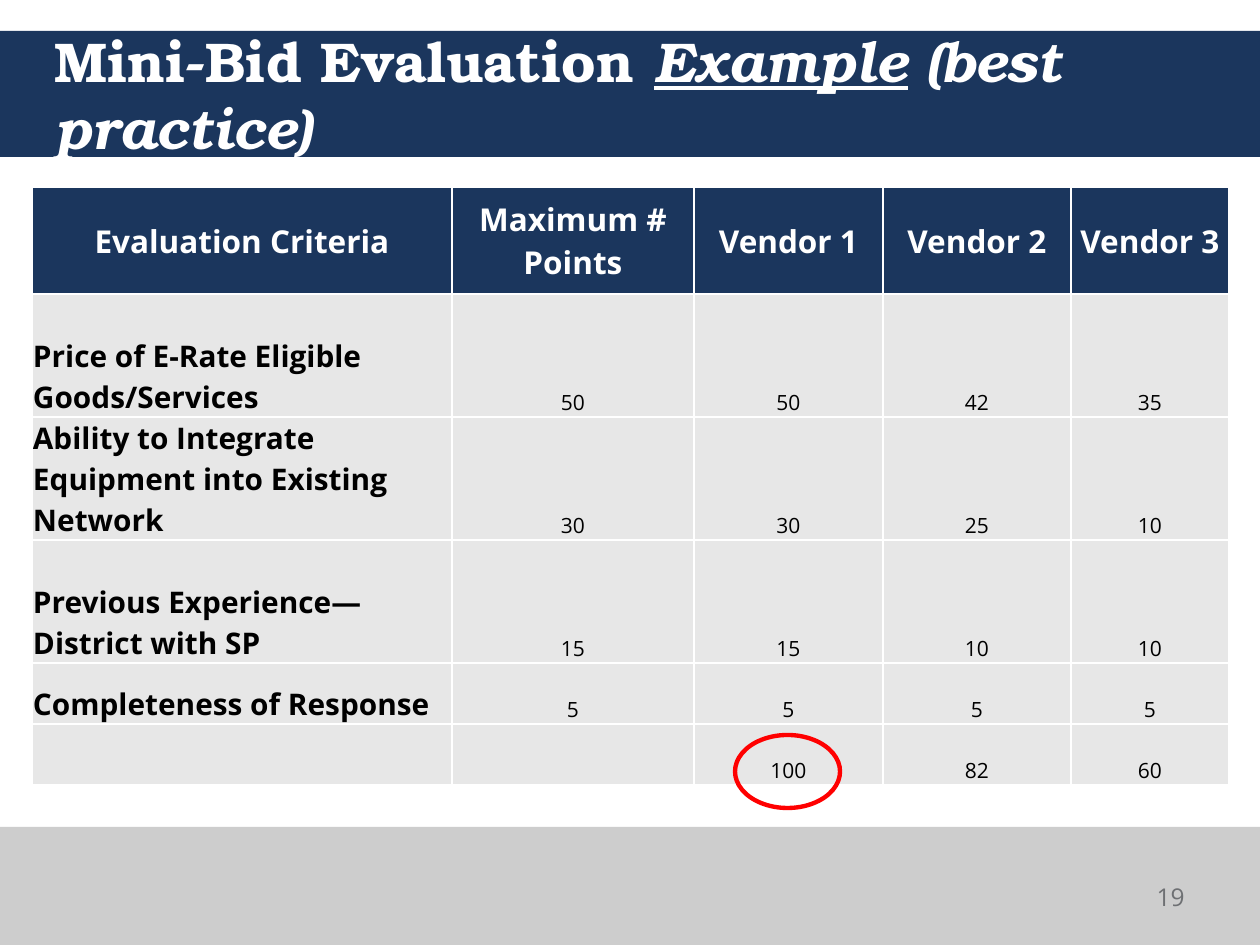
from dataclasses import dataclass

from lxml import etree
from pptx import Presentation
from pptx.dml.color import RGBColor
from pptx.enum.shapes import MSO_SHAPE
from pptx.enum.text import MSO_ANCHOR, PP_ALIGN
from pptx.oxml.ns import qn
from pptx.util import Emu, Pt

RECT, OVAL = MSO_SHAPE.RECTANGLE, MSO_SHAPE.OVAL
LEFT, CENTER, RIGHT = PP_ALIGN.LEFT, PP_ALIGN.CENTER, PP_ALIGN.RIGHT
TOP, MIDDLE, BOTTOM = MSO_ANCHOR.TOP, MSO_ANCHOR.MIDDLE, MSO_ANCHOR.BOTTOM

EMU_PER_PX = 914400 / 126
NAVY, GREY, CELL = "1B365D", "CDCDCD", "E7E7E7"
WHITE, BLACK, RED, NUMBER = "FFFFFF", "000000", "FF0000", "6E7073"
BODY_FONT, TITLE_FONT = "Open Sans", "TeX Gyre Bonum"

COL_WIDTHS = [420, 242, 189, 188, 158]
ROW_HEIGHTS = [107, 123, 123, 123, 61, 61]
ROWS = [
    ["Evaluation Criteria", "Maximum # Points", "Vendor 1", "Vendor 2", "Vendor 3"],
    ["Price of E-Rate Eligible Goods/Services", "50", "50", "42", "35"],
    ["Ability to Integrate Equipment into Existing Network", "30", "30", "25", "10"],
    ["Previous Experience—\vDistrict with SP", "15", "15", "10", "10"],
    ["Completeness of Response", "5", "5", "5", "5"],
    ["", "", "100", "82", "60"],
]


@dataclass
class Box:
    left: int
    top: int
    width: int
    height: int

    def emu(self) -> list[Emu]:
        return [px(v) for v in (self.left, self.top, self.width, self.height)]


@dataclass
class CellStyle:
    fill: str
    anchor: MSO_ANCHOR
    align: PP_ALIGN
    font: dict


HEADER = CellStyle(NAVY, MIDDLE, CENTER,
                   {"name": BODY_FONT, "size": 18, "bold": True, "color": WHITE})
CRITERION = CellStyle(CELL, BOTTOM, LEFT,
                      {"name": BODY_FONT, "size": 17, "bold": True, "color": BLACK})
SCORE = CellStyle(CELL, BOTTOM, CENTER,
                  {"name": BODY_FONT, "size": 12, "bold": False, "color": BLACK})


def px(n: int) -> Emu:
    return Emu(round(n * EMU_PER_PX))


def rgb(color: str) -> RGBColor:
    return RGBColor.from_string(color)


def set_font(font, values: dict) -> None:
    for key, value in values.items():
        if key == "color":
            font.color.rgb = rgb(value)
        else:
            setattr(font, key, Pt(value) if key == "size" else value)


def add_shape(s, kind, box: Box, fill: str = "", line: str = "") -> None:
    sp = s.shapes.add_shape(kind, *box.emu())
    sp.shadow.inherit = False
    if fill:
        sp.fill.solid()
        sp.fill.fore_color.rgb = rgb(fill)
    else:
        sp.fill.background()
    if line:
        sp.line.color.rgb = rgb(line)
        sp.line.width = Pt(2.5)
    else:
        sp.line.fill.background()


def add_text(s, box: Box, runs: list[tuple[str, dict]], font: dict,
             align=LEFT, anchor=TOP) -> None:
    """Add one paragraph; each run may extend the shared font values."""
    tf = s.shapes.add_textbox(*box.emu()).text_frame
    tf.word_wrap = True
    tf.vertical_anchor = anchor
    p = tf.paragraphs[0]
    p.alignment = align
    for text, extra in runs:
        r = p.add_run()
        r.text = text
        set_font(r.font, font | extra)


def add_borders(cell, color: str, width: float) -> None:
    tc_pr = cell._tc.get_or_add_tcPr()
    for i, side in enumerate(("lnL", "lnR", "lnT", "lnB")):
        ln = etree.Element(qn(f"a:{side}"), w=str(Pt(width)))
        fill = etree.SubElement(ln, qn("a:solidFill"))
        etree.SubElement(fill, qn("a:srgbClr"), val=color)
        tc_pr.insert(i, ln)


def fill_cell(cell, text: str, style: CellStyle) -> None:
    cell.fill.solid()
    cell.fill.fore_color.rgb = rgb(style.fill)
    cell.vertical_anchor = style.anchor
    cell.margin_left = cell.margin_right = cell.margin_top = px(1)
    cell.margin_bottom = 0
    p = cell.text_frame.paragraphs[0]
    p.text = text
    p.alignment = style.align
    set_font(p.font, style.font)
    for r in p.runs:
        set_font(r.font, style.font)
    add_borders(cell, WHITE, 1)


def add_score_table(s, left: int, top: int) -> None:
    box = Box(left, top, sum(COL_WIDTHS), sum(ROW_HEIGHTS))
    table = s.shapes.add_table(len(ROWS), len(COL_WIDTHS), *box.emu()).table
    for col, width in zip(table.columns, COL_WIDTHS):
        col.width = px(width)
    for row, height in zip(table.rows, ROW_HEIGHTS):
        row.height = px(height)
    for i, texts in enumerate(ROWS):
        for j, text in enumerate(texts):
            style = HEADER if i == 0 else CRITERION if j == 0 else SCORE
            fill_cell(table.cell(i, j), text, style)


def main() -> None:
    prs = Presentation()
    prs.slide_width, prs.slide_height = px(1260), px(945)
    s = prs.slides.add_slide(prs.slide_layouts[6])

    add_shape(s, RECT, Box(0, 31, 1260, 126), fill=NAVY)
    add_shape(s, RECT, Box(0, 827, 1260, 118), fill=GREY)
    title = [("Mini-Bid Evaluation ", {}),
             ("Example", {"italic": True, "underline": True}),
             (" (best practice)", {"italic": True})]
    add_text(s, Box(42, 31, 1144, 126), title,
             {"name": TITLE_FONT, "size": 32, "bold": True, "color": WHITE},
             anchor=MIDDLE)
    add_text(s, Box(1134, 876, 63, 50), [("19", {})],
             {"name": BODY_FONT, "size": 14, "color": NUMBER}, align=RIGHT)
    add_score_table(s, 32, 187)
    add_shape(s, OVAL, Box(735, 735, 105, 73), line=RED)
    prs.save("out.pptx")


if __name__ == "__main__":
    main()
